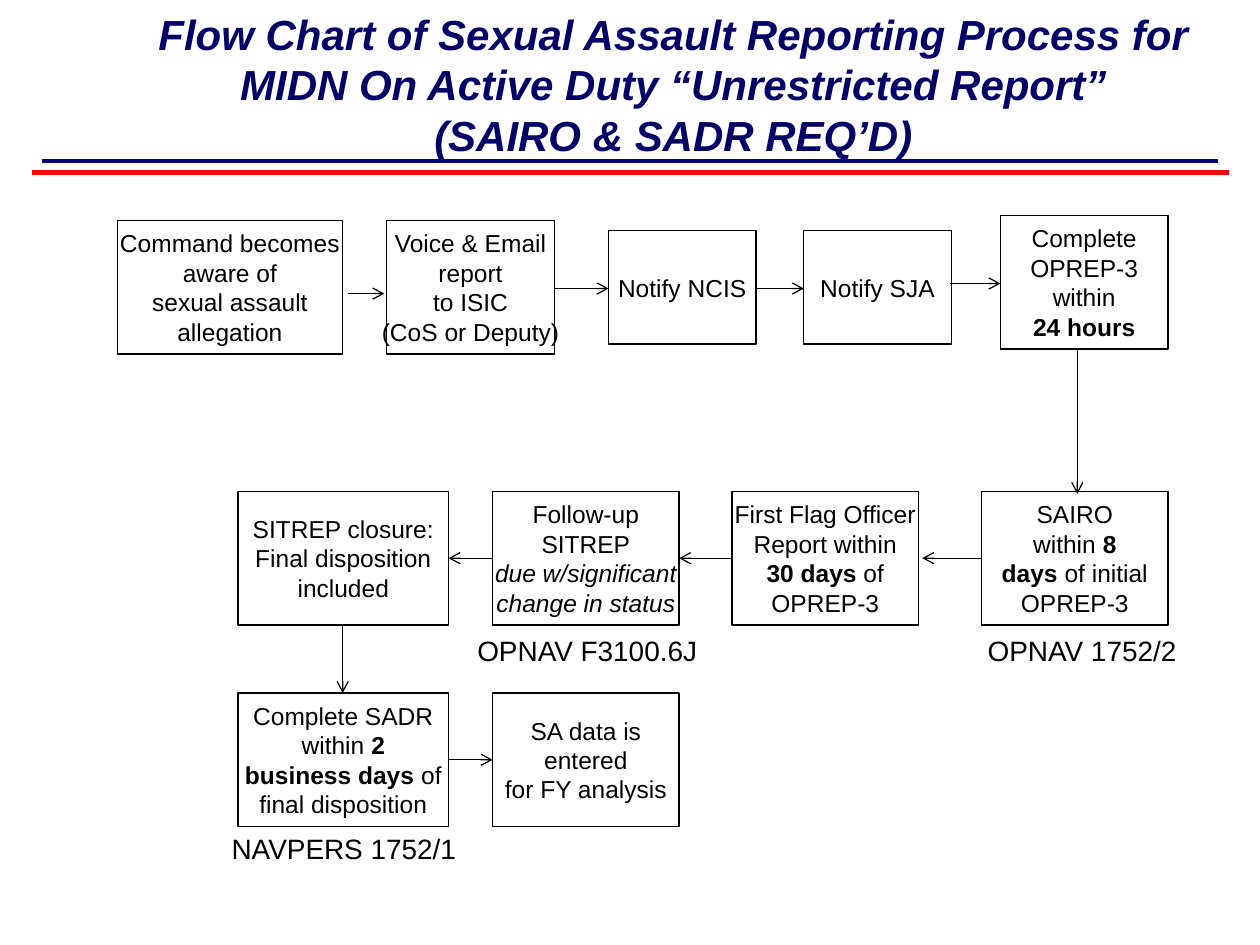
from lxml import etree
from pptx import Presentation
from pptx.dml.color import RGBColor
from pptx.enum.shapes import MSO_CONNECTOR as Connector, MSO_SHAPE as Shape
from pptx.enum.text import MSO_ANCHOR as Anchor, PP_ALIGN as Align
from pptx.oxml.ns import qn
from pptx.util import Inches, Pt

BLACK = RGBColor(0x00, 0x00, 0x00)
WHITE = RGBColor(0xFF, 0xFF, 0xFF)
NAVY = RGBColor(0x00, 0x00, 0x80)
TITLE_BLUE = RGBColor(0x00, 0x00, 0x66)
RED = RGBColor(0xFF, 0x00, 0x00)

TITLE = [
    "Flow Chart of Sexual Assault Reporting Process for "
    "MIDN On Active Duty “Unrestricted Report”",
    "(SAIRO & SADR REQ’D)",
]

ROW_2, ROW_3 = 2.19, 3.79
MID_1, MID_2, MID_3 = 0.58, 2.72, 4.32
STEP_HEIGHT = 1.06

STEPS = [
    (0, 0.04, 1.79, STEP_HEIGHT,
     ["Command becomes", "aware of", "sexual assault", "allegation"]),
    (2.14, 0.04, 1.33, STEP_HEIGHT,
     ["Voice & Email", "report", "to ISIC", "(CoS or Deputy)"]),
    (3.9, 0.12, 1.17, 0.9, ["Notify NCIS"]),
    (5.45, 0.12, 1.17, 0.9, ["Notify SJA"]),
    (7.01, 0, 1.33, STEP_HEIGHT,
     ["Complete", "OPREP-3", "within", "*24 hours*"]),
    (6.86, ROW_2, 1.48, STEP_HEIGHT,
     ["SAIRO", "within *8*", "*days* of initial", "OPREP-3"]),
    (4.88, ROW_2, 1.48, STEP_HEIGHT,
     ["First Flag Officer", "Report within", "*30 days* of", "OPREP-3"]),
    (2.98, ROW_2, 1.48, STEP_HEIGHT,
     ["Follow-up", "SITREP", "_due w/significant", "_change in status"]),
    (0.96, ROW_2, 1.67, STEP_HEIGHT,
     ["SITREP closure:", "Final disposition", "included"]),
    (0.96, ROW_3, 1.67, STEP_HEIGHT,
     ["Complete SADR", "within *2*", "*business days* of", "final disposition"]),
    (2.98, ROW_3, 1.48, STEP_HEIGHT,
     ["SA data is", "entered", "for FY analysis"]),
]

ARROWS = [
    (1.83, 0.62, 2.12, 0.62),
    (3.47, MID_1, 3.9, MID_1),
    (5.07, MID_1, 5.45, MID_1),
    (6.61, 0.54, 7.01, 0.54),
    (7.62, 1.07, 7.62, 2.21),
    (6.86, MID_2, 6.39, MID_2),
    (4.88, MID_2, 4.46, MID_2),
    (2.98, MID_2, 2.63, MID_2),
    (1.79, 3.25, 1.79, ROW_3),
    (2.63, MID_3, 2.98, MID_3),
]

FORMS = [
    (6.81, 3.27, 1.78, "OPNAV 1752/2"),
    (2.76, 3.27, 2.03, "OPNAV F3100.6J"),
    (0.81, 4.84, 2.06, "NAVPERS 1752/1"),
]


def style_font(para, size, color):
    """Set the shared Arial style on a paragraph."""
    para.font.name = "Arial"
    para.font.size = Pt(size)
    para.font.color.rgb = color


def add_line(page, start, end, color, width, arrow=False):
    """Draw a straight line, with an open arrowhead at its end if asked."""
    line = page.shapes.add_connector(
        Connector.STRAIGHT, *(Inches(value) for value in (*start, *end)))
    line.line.color.rgb = color
    line.line.width = Pt(width)
    if arrow:
        etree.SubElement(line.line._get_or_add_ln(), qn("a:tailEnd"), type="arrow")
    etree.SubElement(line._element.spPr, qn("a:effectLst"))


def add_step(page, left, top, width, height, lines):
    """Draw a process box; *stars* mark bold and a leading _ marks italic."""
    step = page.shapes.add_shape(
        Shape.FLOWCHART_PROCESS,
        Inches(left), Inches(top), Inches(width), Inches(height))
    step.shadow.inherit = False
    step.fill.solid()
    step.fill.fore_color.rgb = WHITE
    step.line.color.rgb = BLACK
    step.line.width = Pt(0.75)
    frame = step.text_frame
    frame.word_wrap = False
    frame.vertical_anchor = Anchor.MIDDLE
    for index, line in enumerate(lines):
        para = frame.add_paragraph() if index else frame.paragraphs[0]
        para.alignment = Align.CENTER
        style_font(para, 14, BLACK)
        if line.startswith("_"):
            para.font.italic = True
        for part, text in enumerate(line.lstrip("_").split("*")):
            if text:
                span = para.add_run()
                span.text = text
                if part % 2:
                    span.font.bold = True


def add_form_label(page, left, top, width, text):
    """Place the form number that belongs to a step."""
    box = page.shapes.add_textbox(
        Inches(left), Inches(top), Inches(width), Inches(0.37))
    box.text_frame.word_wrap = False
    para = box.text_frame.paragraphs[0]
    para.text = text
    style_font(para, 16, BLACK)


def add_header(page, left, top, width):
    """Place the title and the two rules below it."""
    box = page.shapes.add_textbox(
        Inches(left + 0.68), Inches(top), Inches(8.83), Inches(1.25))
    frame = box.text_frame
    frame.word_wrap = True
    frame.vertical_anchor = Anchor.MIDDLE
    para = frame.paragraphs[0]
    para.text = "\v".join(TITLE)
    para.alignment = Align.CENTER
    style_font(para, 24, TITLE_BLUE)
    para.font.bold = True
    para.font.italic = True
    for inset, drop, color in ((0.08, 1.24, NAVY), (0, 1.33, RED)):
        add_line(page, (left + inset, top + drop),
                 (left + width - inset, top + drop), color, 2.5)


def add_flow_chart(page, left, top):
    """Place the steps, arrows and form labels from the given corner."""
    for x, y, width, height, lines in STEPS:
        add_step(page, left + x, top + y, width, height, lines)
    for x1, y1, x2, y2 in ARROWS:
        add_line(page, (left + x1, top + y1), (left + x2, top + y2),
                 BLACK, 0.75, arrow=True)
    for x, y, width, text in FORMS:
        add_form_label(page, left + x, top + y, width, text)


def main():
    """Build the slide and save it."""
    deck = Presentation()
    deck.slide_width, deck.slide_height = Inches(10), Inches(7.5)
    page = deck.slides.add_slide(deck.slide_layouts[6])
    add_header(page, 0.25, 0.04, 9.5)
    add_flow_chart(page, 0.93, 1.71)
    deck.save("out.pptx")


if __name__ == "__main__":
    main()
